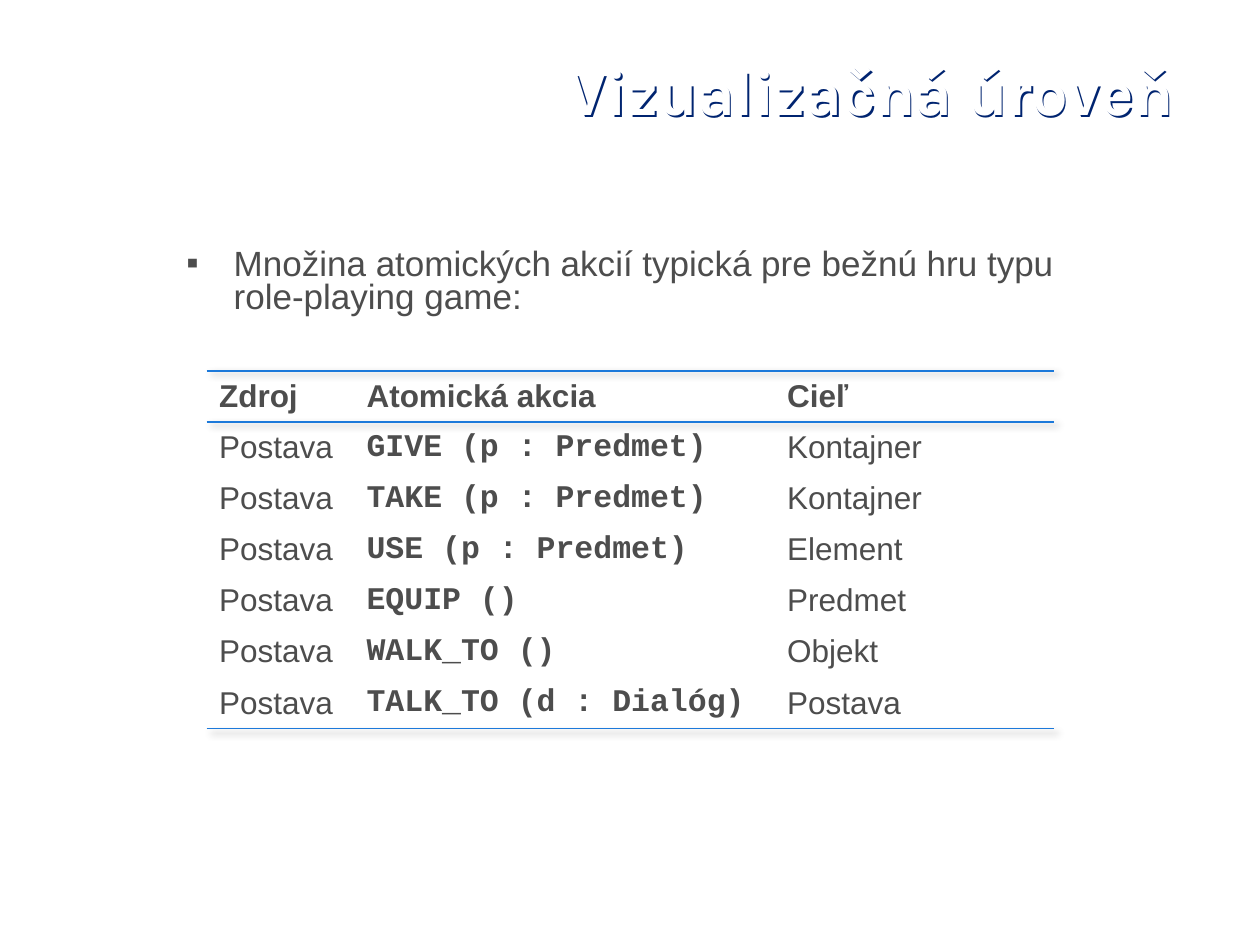
from pptx import Presentation
from pptx.dml.color import RGBColor
from pptx.enum.text import MSO_ANCHOR, PP_ALIGN
from pptx.oxml import parse_xml
from pptx.oxml.ns import nsdecls, qn
from pptx.util import Pt

COLORS = {"title": "FFFFFF", "title_shadow": "002470", "text": "4D4D4D",
          "rule": "1C79DA", "table_shadow": "000000"}
NO_STYLE = "{2D5ABB26-0587-4C30-8999-92F81FD0307C}"
ACTIONS = [
    ("Zdroj", "Atomická akcia", "Cieľ"),
    ("Postava", "GIVE (p : Predmet)", "Kontajner"),
    ("Postava", "TAKE (p : Predmet)", "Kontajner"),
    ("Postava", "USE (p : Predmet)", "Element"),
    ("Postava", "EQUIP ()", "Predmet"),
    ("Postava", "WALK_TO ()", "Objekt"),
    ("Postava", "TALK_TO (d : Dialóg)", "Postava"),
]


def set_font(p, name, size, color, bold=False):
    """Format every run of a paragraph."""
    for r in p.runs:
        r.font.name, r.font.size, r.font.bold = name, Pt(size), bold
        r.font.color.rgb = RGBColor.from_string(COLORS[color])


def shadow(color, blur, dist, alpha):
    """Return an effect list with a shadow to the lower right."""
    return parse_xml(
        f'<a:effectLst {nsdecls("a")}><a:outerShdw blurRad="{Pt(blur)}" '
        f'dist="{Pt(dist)}" dir="2700000" algn="tl" rotWithShape="0">'
        f'<a:srgbClr val="{COLORS[color]}"><a:alpha val="{alpha * 1000}"/>'
        '</a:srgbClr></a:outerShdw></a:effectLst>')


def add_border(cell, side):
    """Draw a rule on the top (T) or bottom (B) of a cell."""
    cell._tc.get_or_add_tcPr().append(parse_xml(
        f'<a:ln{side} {nsdecls("a")} w="{Pt(1)}"><a:solidFill>'
        f'<a:srgbClr val="{COLORS["rule"]}"/></a:solidFill></a:ln{side}>'))


def add_text(s, box, text):
    """Add a wrapping text box and return it with its first paragraph."""
    sp = s.shapes.add_textbox(*map(Pt, box))
    tf = sp.text_frame
    tf.word_wrap = True
    tf.text = text
    return sp, tf.paragraphs[0]


def add_title(s, box, text):
    """Add the right-aligned title with its dark shadow."""
    sp, p = add_text(s, box, text)
    sp.text_frame.vertical_anchor = MSO_ANCHOR.MIDDLE
    p.alignment = PP_ALIGN.RIGHT
    set_font(p, "Karla", 36, "title", True)
    sp._element.spPr.append(shadow("title_shadow", 0, 1.4, 100))


def add_body(s, box, text):
    """Add the bulleted introduction."""
    p = add_text(s, box, text)[1]
    p.line_spacing = 0.8
    pPr = p._p.get_or_add_pPr()
    pPr.set("marL", str(Pt(27)))
    pPr.set("indent", str(Pt(-27)))
    pPr.append(parse_xml(f'<a:buFont {nsdecls("a")} typeface="Arial"/>'))
    pPr.append(parse_xml(f'<a:buChar {nsdecls("a")} char="▪"/>'))
    set_font(p, "Arial", 20, "text")


def add_actions(s, box, rows, widths):
    """Add the table of actions, ruled around its header and at its foot."""
    table = s.shapes.add_table(len(rows), len(widths), *map(Pt, box)).table
    table.first_row = table.horz_banding = False
    tblPr = table._tbl.tblPr
    tblPr.find(qn("a:tableStyleId")).text = NO_STYLE
    tblPr.insert(0, shadow("table_shadow", 4, 3, 40))
    for column, width in zip(table.columns, widths):
        column.width = Pt(width)
    for i, row in enumerate(rows):
        table.rows[i].height = Pt(box[3] / len(rows))
        for j, text in enumerate(row):
            cell = table.cell(i, j)
            cell.text = text
            cell.vertical_anchor = MSO_ANCHOR.MIDDLE
            code = i > 0 and j == 1
            set_font(cell.text_frame.paragraphs[0],
                     "Courier New" if code else "Arial", 18, "text",
                     code or i == 0)
            if i == 0:
                add_border(cell, "T")
            if i in (0, len(rows) - 1):
                add_border(cell, "B")
            cell.fill.background()


def main():
    """Build and save the slide."""
    prs = Presentation()
    prs.slide_width, prs.slide_height = Pt(720), Pt(540)
    s = prs.slides.add_slide(prs.slide_layouts[6])
    add_title(s, (93.6, 26, 584, 51), "Vizualizačná úroveň")
    add_body(s, (99.4, 139, 533, 352),
             "Množina atomických akcií typická pre bežnú hru typu "
             "role-playing game:")
    add_actions(s, (118, 212, 484.6, 204.4), ACTIONS, (84.3, 240.3, 160))
    prs.save("out.pptx")


if __name__ == "__main__":
    main()
